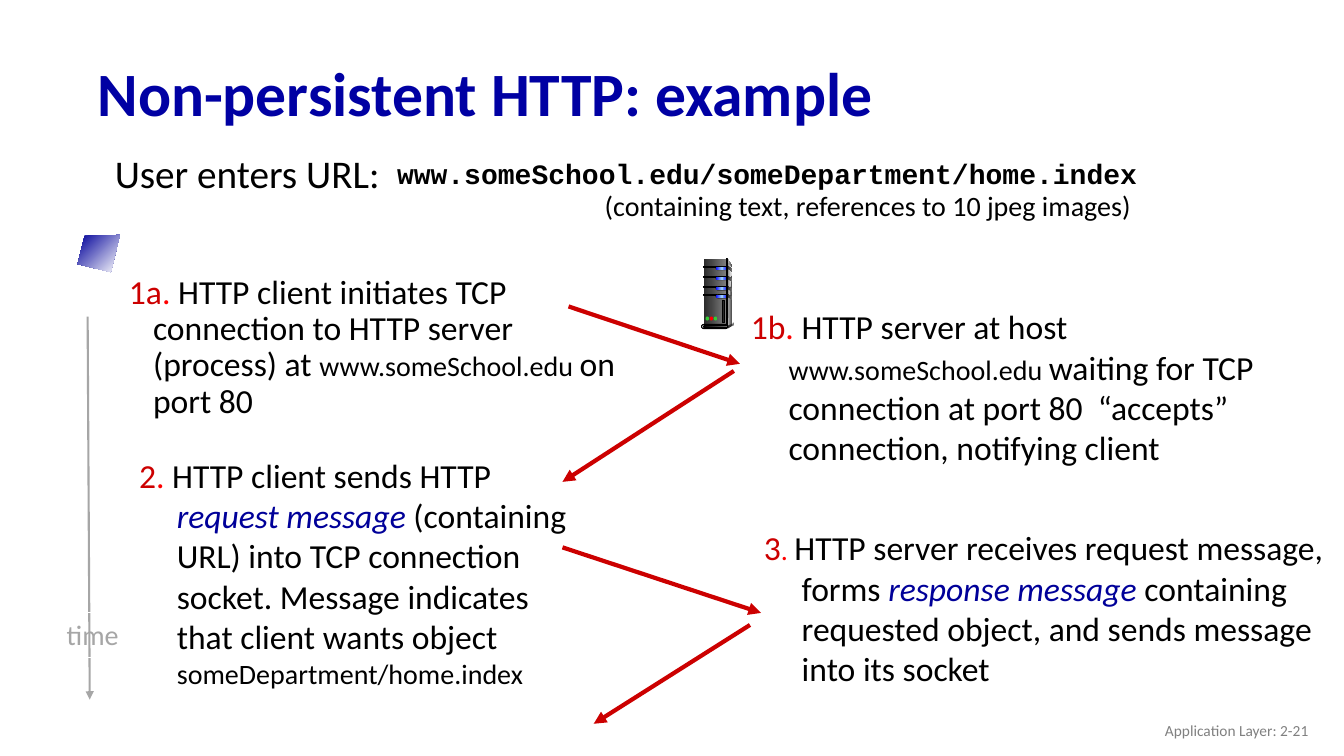
import lxml.etree
import pptx
import pptx.dml.color
import pptx.enum.shapes
import pptx.enum.text
import pptx.oxml.ns
import pptx.util

Pt = pptx.util.Pt
RGB = pptx.dml.color.RGBColor
SHAPE = pptx.enum.shapes.MSO_SHAPE
ALIGN = pptx.enum.text.PP_ALIGN
ANCHOR = pptx.enum.text.MSO_ANCHOR
qn = pptx.oxml.ns.qn

BLACK = RGB(0x00, 0x00, 0x00)
WHITE = RGB(0xFF, 0xFF, 0xFF)
TITLE_BLUE = RGB(0x00, 0x00, 0xA3)
TERM_BLUE = RGB(0x00, 0x00, 0x99)
STEP_RED = RGB(0xCC, 0x00, 0x00)
RED = RGB(0xFF, 0x00, 0x00)
TIME_GRAY = RGB(0xA6, 0xA6, 0xA6)
GRAY = RGB(0x80, 0x80, 0x80)
DARK = RGB(0x29, 0x29, 0x29)
CHARCOAL = RGB(0x33, 0x33, 0x33)
SILVER = RGB(0xDD, 0xDD, 0xDD)
PALE = RGB(0xF8, 0xF8, 0xF8)
LED_BLUE = RGB(0x00, 0x00, 0xFF)
LED_LIGHT = RGB(0x99, 0xCC, 0xFF)
LED_GREEN = RGB(0x33, 0xCC, 0x33)


def add_run(p, text, size, color=BLACK, font="Calibri", bold=False, italic=False):
    r = p.add_run()
    r.text = text
    r.font.name = font
    r.font.size = Pt(size)
    r.font.color.rgb = color
    r.font.bold = bold
    r.font.italic = italic


def add_text(slide, box, runs, indent=0, margin=None, spacing=None, before=None,
             align=ALIGN.LEFT, anchor=ANCHOR.TOP):
    """Add a one-paragraph text box; indent is the depth of its hanging first line."""
    tf = slide.shapes.add_textbox(*map(Pt, box)).text_frame
    tf.word_wrap = True
    tf.vertical_anchor = anchor
    p = tf.paragraphs[0]
    p.alignment = align
    if spacing:
        p.line_spacing = spacing
    if before:
        p.space_before = Pt(before)
    if indent:
        pPr = p._p.get_or_add_pPr()
        pPr.set("marL", str(Pt(margin or indent)))
        pPr.set("indent", str(Pt(-indent)))
    for text, size, *style in runs:
        add_run(p, text, size, **(style[0] if style else {}))


def add_step(slide, box, number, runs, dot=(".", 24), **layout):
    label = [(number, 24, {"color": STEP_RED}), (*dot, {"color": RED})]
    add_text(slide, box, label + runs, **layout)


def add_arrow(slide, start, end, color, width):
    line = slide.shapes.add_connector(
        pptx.enum.shapes.MSO_CONNECTOR.STRAIGHT, *map(Pt, (*start, *end)))
    line.line.color.rgb = color
    line.line.width = Pt(width)
    ln = line.line._get_or_add_ln()
    lxml.etree.SubElement(ln, qn("a:tailEnd"), type="triangle")
    lxml.etree.SubElement(line._element.spPr, qn("a:effectLst"))


def paint(sp, colors, angle=0, outline=None):
    """Fill with one colour, or with a clockwise-angled gradient of evenly spaced ones."""
    sp.shadow.inherit = False
    if len(colors) == 1:
        sp.fill.solid()
        sp.fill.fore_color.rgb = colors[0]
    else:
        sp.fill.gradient()
        sp.fill.gradient_angle = (360 - angle) % 360
        stops = next(sp._element.iter(qn("a:gsLst")))
        for stop in list(stops):
            stops.remove(stop)
        for i, color in enumerate(colors):
            gs = lxml.etree.SubElement(
                stops, qn("a:gs"), pos=str(100000 * i // (len(colors) - 1)))
            lxml.etree.SubElement(gs, qn("a:srgbClr"), val=str(color))
    if outline is None:
        sp.line.fill.background()
    else:
        sp.line.color.rgb = outline
        sp.line.width = Pt(0.75)


def add_part(shapes, kind, box, *colors, outline=None):
    sp = shapes.add_shape(kind, *map(Pt, box))
    if kind == SHAPE.ROUNDED_RECTANGLE:
        sp.adjustments[0] = 0.5
    paint(sp, colors, outline=outline)


def add_polygon(shapes, points, *colors, angle=0):
    corners = [(Pt(x), Pt(y)) for x, y in points]
    fb = shapes.build_freeform(*corners[0])
    fb.add_line_segments(corners[1:], close=True)
    paint(fb.convert_to_shape(), colors, angle)


def add_server(slide):
    parts = slide.shapes.add_group_shape().shapes
    rect, pill, oval = SHAPE.RECTANGLE, SHAPE.ROUNDED_RECTANGLE, SHAPE.OVAL
    left, edge, right, top = 502.6, 519.8, 523.4, 185
    add_polygon(parts, [(edge, top), (right, 190.8), (right, 231.1), (519.1, 233.3)],
                SILVER, CHARCOAL)
    add_part(parts, rect, (left, top, 16.6, 48.2), DARK, GRAY)
    add_polygon(parts, [(edge, 187.9), (522.7, 191.5), (520.9, 211), (edge, 231.8)],
                GRAY, PALE)
    for y in (190.1, 197.3, 204.5, 210.2):
        add_part(parts, rect, (left, y, 9.4, 0.7), BLACK, outline=BLACK)
        add_part(parts, pill, (511.2, y, 9.4, 2.9), BLACK)
        add_part(parts, pill, (511.2, y + 0.4, 8.6, 2.2), LED_BLUE, LED_LIGHT, LED_BLUE)
        add_polygon(parts, [(edge, y), (right, y + 2.2), (right, y + 4.3), (edge, y + 1.5)],
                    DARK, GRAY)
    add_part(parts, rect, (519.1, top, 0.7, 48.2), CHARCOAL, SILVER, CHARCOAL,
             outline=BLACK)
    add_part(parts, oval, (right, 230.4, 0.7, 2.2), CHARCOAL)
    add_polygon(parts, [(edge, 232.6), (edge, 234.7), (right, 232.6), (right, 231.1)],
                CHARCOAL)
    add_part(parts, pill, (501.1, 231.8, 18.7, 2.9), SILVER, outline=BLACK)
    add_part(parts, pill, (left, 232.6, 17.3, 1.4), BLACK, GRAY, outline=BLACK)
    for i, color in enumerate((LED_GREEN, RED, LED_GREEN)):
        add_part(parts, oval, (504 + 2.9 * i, 226.1, 2.5, 2.9), color)
    add_part(parts, rect, (516.2, 214.6, 1.4, 15.8), DARK, outline=BLACK)


def add_time_label(slide):
    sp = slide.shapes.add_shape(SHAPE.RECTANGLE, *map(Pt, (39.6, 437.8, 53.3, 31.7)))
    sp.shadow.inherit = False
    sp.fill.background()
    sp.line.color.rgb = WHITE
    sp.line.width = Pt(0.75)
    tf = sp.text_frame
    tf.word_wrap = False
    tf.auto_size = pptx.enum.text.MSO_AUTO_SIZE.SHAPE_TO_FIT_TEXT
    tf.vertical_anchor = ANCHOR.TOP
    p = tf.paragraphs[0]
    p.alignment = ALIGN.CENTER
    add_run(p, "time", 20, TIME_GRAY)


def main():
    prs = pptx.Presentation()
    prs.slide_width, prs.slide_height = Pt(960), Pt(540)
    slide = prs.slides.add_slide(prs.slide_layouts[6])
    term = {"color": TERM_BLUE, "italic": True}
    bullet = {"indent": 17.3, "margin": 28.1, "spacing": 0.9, "before": 10}

    add_text(slide, (62.6, 33.8, 828, 70.6),
             [("Non-persistent HTTP: example", 44, {"color": TITLE_BLUE, "bold": True})],
             spacing=0.9, anchor=ANCHOR.MIDDLE)
    add_arrow(slide, (62.6, 226.1), (64.1, 499.7), TIME_GRAY, 1.5)
    add_text(slide, (64.1, 106.6, 625.7, 36.7), [("User enters URL:", 28)], **bullet)
    add_step(slide, (74.2, 193, 381.6, 149.8), "1a", [
        (" HTTP client initiates TCP connection to HTTP server (process) at ", 24),
        ("www.someSchool.edu ", 20), ("on port 80", 24)], **bullet)
    add_step(slide, (92.2, 321.1, 331.9, 85), "2", [
        (" HTTP client sends HTTP ", 24), ("request message", 24, term),
        (" (containing URL) into TCP connection socket. Message indicates "
         "that client wants object ", 24),
        ("someDepartment/home.index", 20)], indent=27)
    add_step(slide, (529.2, 215.3, 424.1, 118.8), "1b", [
        (" HTTP server at host ", 24), ("www.someSchool.edu ", 20),
        ("waiting for TCP connection at port 80  “accepts” connection, "
         "notifying client", 24)], indent=27)
    add_step(slide, (538.6, 373, 424.8, 141.8), "3", [
        ("HTTP server receives request message, forms ", 24),
        ("response message", 24, term),
        (" containing requested object, and sends message into its socket", 24)],
        dot=(". ", 20), indent=27)
    add_time_label(slide)
    for start, end in (((406.1, 218.9), (528.5, 259.9)), ((524.2, 265), (401.8, 344.2)),
                       ((401.8, 391), (543.6, 437.8)), ((535.7, 446.4), (424.1, 517))):
        add_arrow(slide, start, end, STEP_RED, 3)
    add_text(slide, (368.6, 131, 502.6, 31.7),
             [("(containing text, references to 10 jpeg images)", 20)], align=ALIGN.CENTER)
    add_text(slide, (276.5, 111.6, 625.7, 36.7),
             [("www.someSchool.edu/someDepartment/home.index", 20,
               {"font": "Courier New", "bold": True})], indent=27, spacing=0.85)
    add_polygon(slide.shapes, [(85.7, 167.8), (60.5, 168.5), (55.4, 188.6), (79.2, 194.4)],
                TERM_BLUE, WHITE, angle=45)
    add_server(slide)
    add_text(slide, (725.8, 507.6, 216, 28.8),
             [("Application Layer: 2-21", 11, {"color": GRAY})],
             align=ALIGN.RIGHT, anchor=ANCHOR.MIDDLE)
    prs.save("out.pptx")


if __name__ == "__main__":
    main()
